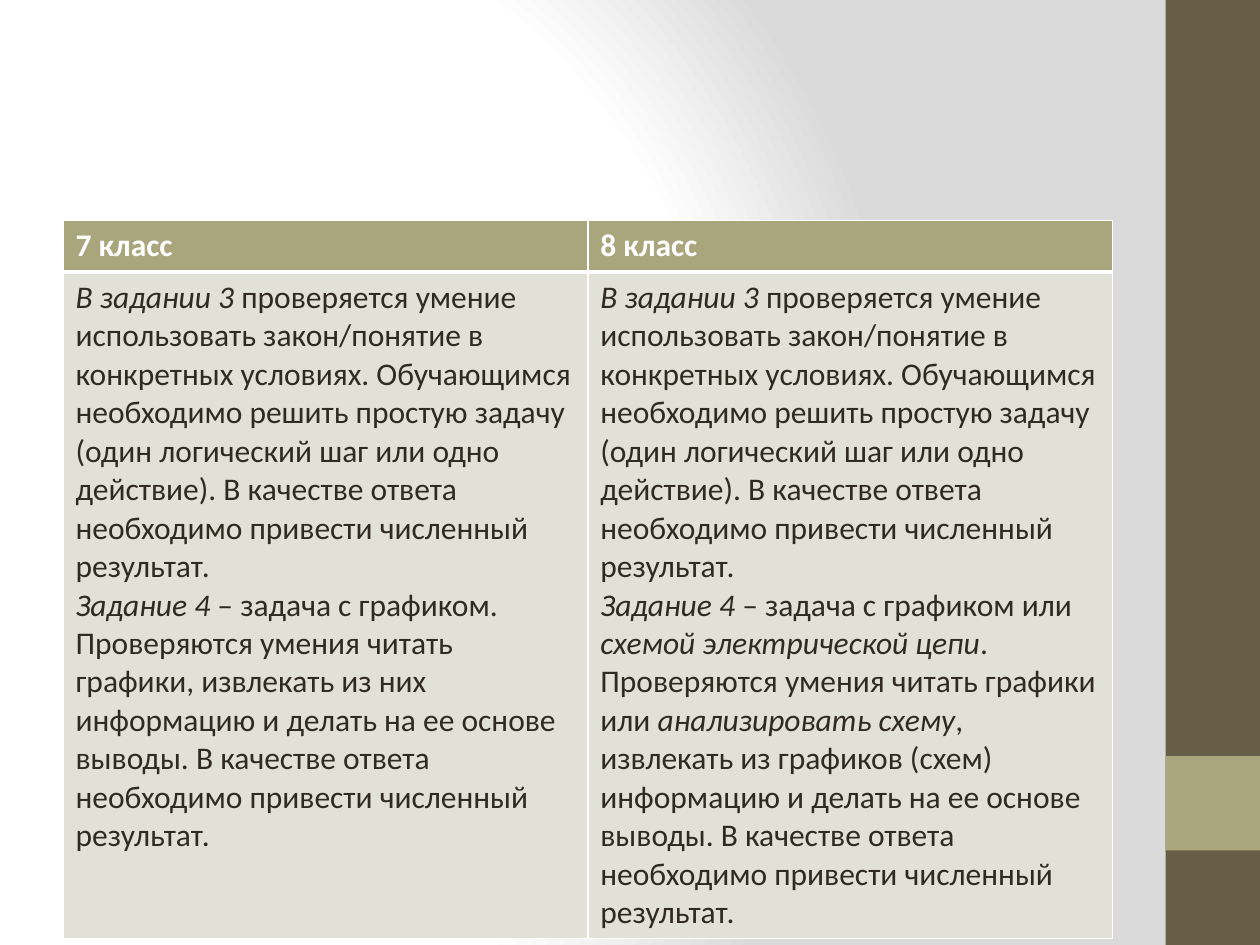
import dataclasses

import pptx
import pptx.dml.color
import pptx.enum.shapes
import pptx.oxml
import pptx.oxml.ns
import pptx.util

Inches = pptx.util.Inches


@dataclasses.dataclass(frozen=True)
class Theme:
    """Colours, font and type size of the slide."""
    dark: str = "675E47"
    accent: str = "A9A57C"
    pale: str = "E2E1D7"
    text: str = "2F2B20"
    white: str = "FFFFFF"
    grey: str = "DADADA"
    font: str = "Calibri"
    size: int = 18


THEME = Theme()
ANSWER = "В качестве ответа необходимо привести численный результат."
TASK_3 = [
    ("В задании 3", True),
    (" проверяется умение использовать закон/понятие в конкретных условиях. "
     "Обучающимся необходимо решить простую задачу (один логический шаг или "
     "одно действие). " + ANSWER, False),
]
TASK_4_GRADE_7 = [
    ("Задание 4", True),
    (" – задача с графиком. Проверяются умения читать графики, извлекать из них "
     "информацию и делать на ее основе выводы. " + ANSWER, False),
]
TASK_4_GRADE_8 = [
    ("Задание 4", True),
    (" – задача с графиком или ", False),
    ("схемой электрической цепи", True),
    (". Проверяются умения читать графики или ", False),
    ("анализировать схему", True),
    (", извлекать из графиков (схем) информацию и делать на ее основе выводы. "
     + ANSWER, False),
]
GRADES = [
    ("7 класс", [TASK_3, TASK_4_GRADE_7]),
    ("8 класс", [TASK_3, TASK_4_GRADE_8]),
]


def rgb(value):
    """Return a colour object for a hex value."""
    return pptx.dml.color.RGBColor.from_string(value)


def set_background(s):
    """Give the slide a circular gradient background."""
    stops = [(0, THEME.white), (75, THEME.white), (100, THEME.grey)]
    gs = "".join(f'<a:gs pos="{pos * 1000}"><a:srgbClr val="{color}"/></a:gs>'
                 for pos, color in stops)
    bg = pptx.oxml.parse_xml(
        f'<p:bg {pptx.oxml.ns.nsdecls("p", "a")}><p:bgPr>'
        f'<a:gradFill rotWithShape="1"><a:gsLst>{gs}</a:gsLst><a:path path="circle">'
        '<a:fillToRect l="20000" t="50000" r="100000" b="50000"/></a:path>'
        '</a:gradFill><a:effectLst/></p:bgPr></p:bg>')
    s.element.cSld.insert(0, bg)


def add_bar(s, top, height, color):
    """Add a plain rectangle at the right edge."""
    sp = s.shapes.add_shape(pptx.enum.shapes.MSO_SHAPE.RECTANGLE, Inches(9.25),
                            Inches(top), Inches(0.75), Inches(height))
    sp.shadow.inherit = False
    sp.fill.solid()
    sp.fill.fore_color.rgb = rgb(color)
    sp.line.fill.background()


def set_borders(cell, widths):
    """Draw white cell borders, widths in points by side."""
    tcPr = cell._tc.get_or_add_tcPr()
    for i, side in enumerate("LRTB"):
        ln = pptx.oxml.parse_xml(
            f'<a:ln{side} {pptx.oxml.ns.nsdecls("a")} '
            f'w="{pptx.util.Pt(widths.get(side, 1))}"><a:solidFill>'
            f'<a:srgbClr val="{THEME.white}"/></a:solidFill></a:ln{side}>')
        tcPr.insert(i, ln)


def fill_cell(cell, paragraphs, fill, color, bold, widths):
    """Write runs into a cell and style it."""
    cell.fill.solid()
    cell.fill.fore_color.rgb = rgb(fill)
    set_borders(cell, widths)
    tf = cell.text_frame
    for i, runs in enumerate(paragraphs):
        p = tf.add_paragraph() if i else tf.paragraphs[0]
        for text, italic in runs:
            r = p.add_run()
            r.text = text
            r.font.color.rgb = rgb(color)
            formats = {"name": THEME.font, "size": pptx.util.Pt(THEME.size),
                       "bold": bold, "italic": italic}
            for name, value in formats.items():
                setattr(r.font, name, value)


def add_grades_table(s):
    """Add the table with one column per grade."""
    table = s.shapes.add_table(2, len(GRADES), Inches(0.5), Inches(1.75),
                               Inches(8.33), Inches(5.61)).table
    for row, height in zip(table.rows, (0.41, 5.2)):
        row.height = Inches(height)
    for col, (title, tasks) in enumerate(GRADES):
        fill_cell(table.cell(0, col), [[(title, False)]], THEME.accent,
                  THEME.white, True, {"B": 3})
        fill_cell(table.cell(1, col), tasks, THEME.pale, THEME.text, False, {"T": 3})


def main():
    """Build and save the slide."""
    prs = pptx.Presentation()
    prs.slide_width, prs.slide_height = Inches(10), Inches(7.5)
    s = prs.slides.add_slide(prs.slide_layouts[6])
    set_background(s)
    add_bar(s, 0, 7.5, THEME.dark)
    add_bar(s, 6, 0.75, THEME.accent)
    add_grades_table(s)
    prs.save("out.pptx")


if __name__ == "__main__":
    main()
